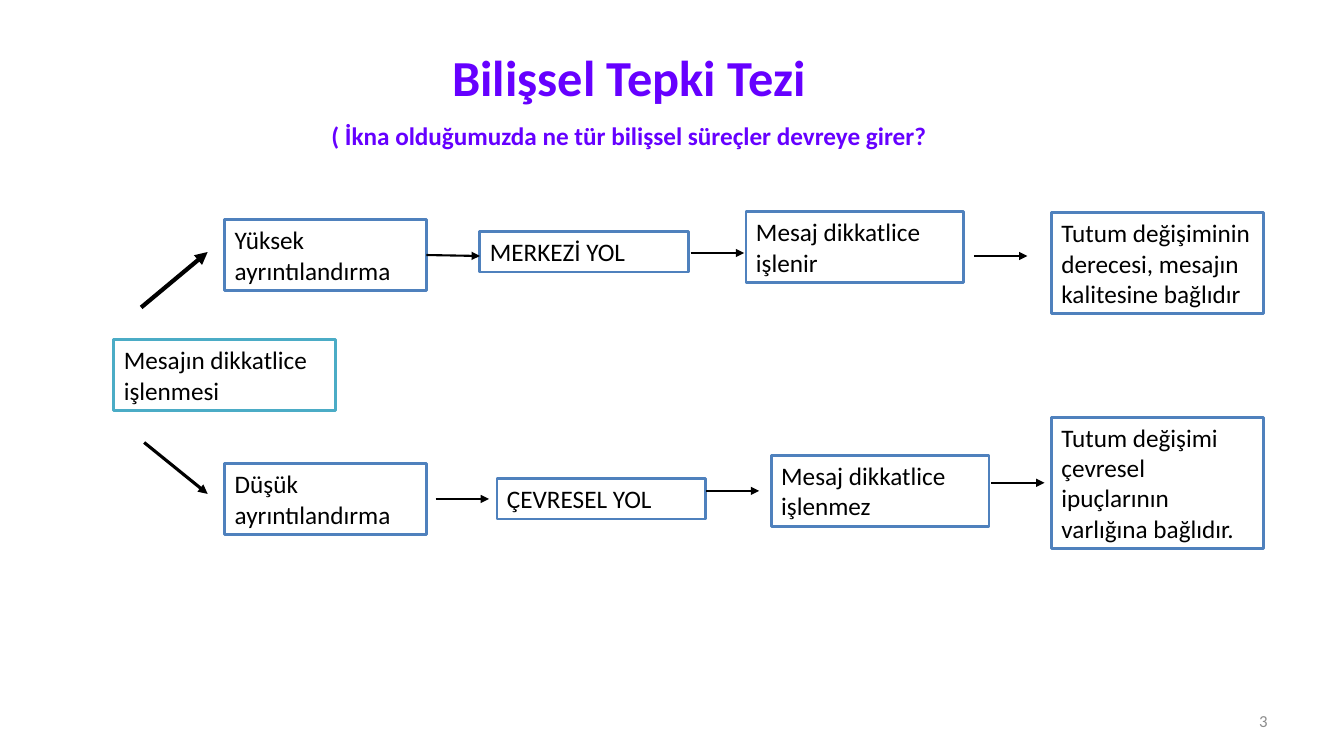
"""Build the slide on the cognitive response thesis with its two persuasion routes."""
from pptx import Presentation
from pptx import util as u
from pptx.dml.color import RGBColor
from pptx.enum import shapes, text
from pptx.oxml.ns import qn
from lxml import etree

THEME = {
    "font": "Calibri", "title": 36, "body": 18, "number": 12, "gap": 10, "border": 2,
    "violet": "6600FF", "blue": "4F81BD", "teal": "4BACC6",
    "black": "000000", "white": "FFFFFF", "gray": "8C8C8C",
}
HEADING = [("Bilişsel Tepki Tezi", "title"),
           ("( İkna olduğumuzda ne tür bilişsel süreçler devreye girer?", "body")]
SLIDE_NUMBER = [("3", "number")]

SOURCE = ("Mesajın dikkatlice işlenmesi", 1.13, 3.37)
HIGH_ROUTE = [("Yüksek ayrıntılandırma", 2.23, 2.18), ("MERKEZİ YOL", 4.76, 2.3),
              ("Mesaj dikkatlice işlenir", 7.4, 2.1),
              ("Tutum değişiminin derecesi, mesajın kalitesine bağlıdır", 10.43, 2.11)]
LOW_ROUTE = [("Düşük ayrıntılandırma", 2.23, 4.6), ("ÇEVRESEL YOL", 4.93, 4.75),
             ("Mesaj dikkatlice işlenmez", 7.65, 4.52),
             ("Tutum değişimi çevresel ipuçlarının varlığına bağlıdır.", 10.43, 4.14)]
SOURCE_SIZE = (2.2, 2)
HIGH_SIZES = [(2, 2), (2.07, 1), (2.16, 2), (2.1, 3)]
LOW_SIZES = HIGH_SIZES[:3] + [(2.1, 4)]
LINE_HEIGHT, PADDING = 0.3, 0.1

BRANCH_ARROWS = [((1.4, 3.05), (2.06, 2.5), 3), ((1.43, 4.39), (2.06, 4.9), 2.25)]
STEP_STARTS = [(4.23, 2.54), (6.85, 2.51), (9.66, 2.54),
               (4.32, 4.95), (7, 4.87), (9.83, 4.79)]
STEP_LENGTH, STEP_WEIGHT = 0.53, 1.5


def color(name):
    return RGBColor.from_string(THEME[name])


def write(shape, lines, ink, align, bold=False):
    frame = shape.text_frame
    frame.word_wrap = True
    for index, (words, size) in enumerate(lines):
        paragraph = frame.add_paragraph() if index else frame.paragraphs[0]
        paragraph.text = words
        paragraph.alignment = align
        if index:
            paragraph.space_before = u.Pt(THEME["gap"])
        font = paragraph.font
        font.name, font.size, font.bold = THEME["font"], u.Pt(THEME[size]), bold
        font.color.rgb = color(ink)
    return frame


def add_text(slide, box, lines, ink, align, bold=False):
    textbox = slide.shapes.add_textbox(*map(u.Inches, box))
    return write(textbox, lines, ink, align, bold)


def add_box(slide, step, size, border):
    words, left, top = step
    width, line_count = size
    height = PADDING + line_count * LINE_HEIGHT
    box = slide.shapes.add_shape(shapes.MSO_SHAPE.RECTANGLE,
                                 *map(u.Inches, (left, top, width, height)))
    box.shadow.inherit = False
    box.fill.solid()
    box.fill.fore_color.rgb = color("white")
    box.line.color.rgb = color(border)
    box.line.width = u.Pt(THEME["border"])
    frame = write(box, [(words, "body")], "black", text.PP_ALIGN.LEFT)
    frame.vertical_anchor = text.MSO_ANCHOR.TOP
    return box


def add_arrow(slide, start, end, weight):
    arrow = slide.shapes.add_connector(shapes.MSO_CONNECTOR.STRAIGHT,
                                       *map(u.Inches, start + end))
    arrow.line.color.rgb = color("black")
    arrow.line.width = u.Pt(weight)
    etree.SubElement(arrow.line._get_or_add_ln(), qn("a:tailEnd"), type="triangle")
    etree.SubElement(arrow._element.spPr, qn("a:effectLst"))
    return arrow


def main():
    presentation = Presentation()
    presentation.slide_width, presentation.slide_height = u.Inches(13.33), u.Inches(7.5)
    slide = presentation.slides.add_slide(presentation.slide_layouts[6])

    number = add_text(slide, (9.56, 6.95, 3.11, 0.4), SLIDE_NUMBER, "gray",
                      text.PP_ALIGN.RIGHT)
    number.vertical_anchor = text.MSO_ANCHOR.MIDDLE
    add_text(slide, (0.46, 0.41, 11.56, 1.16), HEADING, "violet",
             text.PP_ALIGN.CENTER, bold=True)

    add_box(slide, SOURCE, SOURCE_SIZE, "teal")
    boxes = [add_box(slide, step, size, "blue")
             for step, size in zip(HIGH_ROUTE + LOW_ROUTE, HIGH_SIZES + LOW_SIZES)]

    for start, end, weight in BRANCH_ARROWS:
        add_arrow(slide, start, end, weight)
    steps = [add_arrow(slide, (x, y), (x + STEP_LENGTH, y), STEP_WEIGHT)
             for x, y in STEP_STARTS]
    steps[0].begin_connect(boxes[0], 3)

    presentation.save("out.pptx")


if __name__ == "__main__":
    main()
